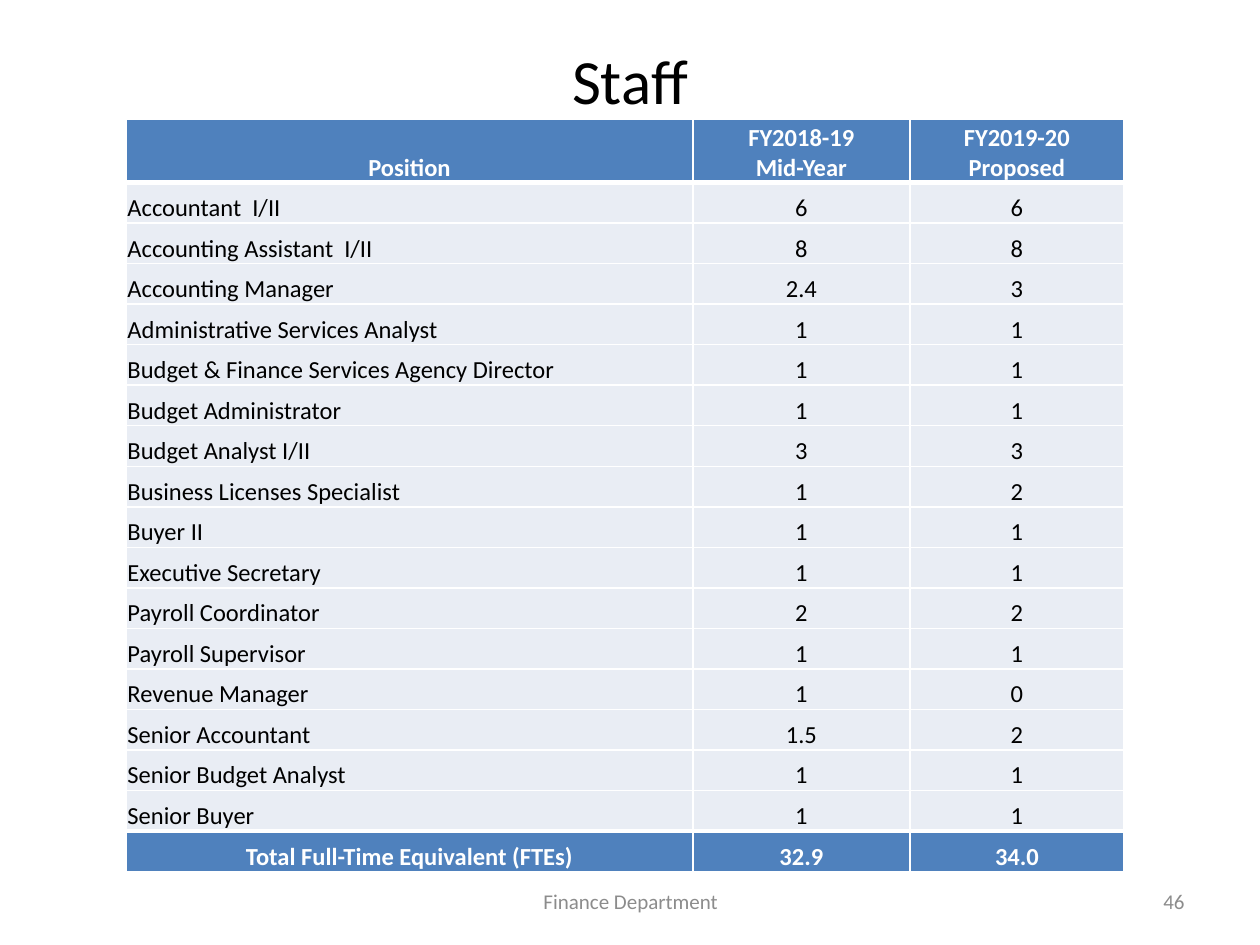
"""Build the Finance Department staff slide."""
from lxml.etree import SubElement
from pptx import Presentation
from pptx.dml.color import RGBColor
from pptx.enum.text import MSO_ANCHOR, PP_ALIGN
from pptx.oxml.ns import qn
from pptx.util import Cm, Pt

HEADINGS = ("Position", "FY2018-19\vMid-Year", "FY2019-20\vProposed")
POSITIONS = [
    ("Accountant  I/II", "6", "6"),
    ("Accounting Assistant  I/II", "8", "8"),
    ("Accounting Manager", "2.4", "3"),
    ("Administrative Services Analyst", "1", "1"),
    ("Budget & Finance Services Agency Director", "1", "1"),
    ("Budget Administrator", "1", "1"),
    ("Budget Analyst I/II", "3", "3"),
    ("Business Licenses Specialist", "1", "2"),
    ("Buyer II", "1", "1"),
    ("Executive Secretary", "1", "1"),
    ("Payroll Coordinator", "2", "2"),
    ("Payroll Supervisor", "1", "1"),
    ("Revenue Manager", "1", "0"),
    ("Senior Accountant", "1.5", "2"),
    ("Senior Budget Analyst", "1", "1"),
    ("Senior Buyer", "1", "1"),
]
TOTAL = ("Total Full-Time Equivalent (FTEs)", "32.9", "34.0")
CAPTIONS = [
    ("Staff", (1.27, 0.64, 22.86, 1.9), 36, "000000", PP_ALIGN.CENTER),
    ("Finance Department", (8.69, 17.65, 8.05, 1.02), 12, "8C8C8C", PP_ALIGN.CENTER),
    ("46", (18.21, 17.65, 5.92, 1.02), 12, "8C8C8C", PP_ALIGN.RIGHT),
]
COLUMN_WIDTHS = (11.43, 4.37, 4.32)
TABLE_LEFT, TABLE_TOP, TABLE_HEIGHT, HEADING_HEIGHT = 2.54, 2.41, 15.16, 1.27


def color(value):
    return RGBColor.from_string(value)


def style(paragraph, size, ink, align, bold=False):
    paragraph.alignment = align
    font = paragraph.font
    font.name, font.size, font.bold = "Calibri", Pt(size), bold
    font.color.rgb = color(ink)


def add_border(cell, side, points):
    line = SubElement(cell._tc.get_or_add_tcPr(), qn(f"a:ln{side}"), w=str(Pt(points)))
    fill = SubElement(line, qn("a:solidFill"))
    SubElement(fill, qn("a:srgbClr"), val="FFFFFF")


def add_caption(slide, wording, place, size, ink, align):
    caption = slide.shapes.add_textbox(*map(Cm, place)).text_frame
    caption.word_wrap = True
    caption.vertical_anchor = MSO_ANCHOR.MIDDLE
    caption.text = wording
    style(caption.paragraphs[0], size, ink, align)


def fill_cell(cell, wording, centered, strong, top, bottom):
    cell.margin_left = cell.margin_right = cell.margin_top = Cm(0.03)
    cell.margin_bottom = 0
    cell.vertical_anchor = MSO_ANCHOR.BOTTOM
    for side, points in (("L", 1), ("R", 1), ("T", top), ("B", bottom)):
        add_border(cell, side, points)
    cell.fill.solid()
    cell.fill.fore_color.rgb = color("4F81BD" if strong else "E9EDF4")
    cell.text = wording
    style(cell.text_frame.paragraphs[0], 14, "FFFFFF" if strong else "000000",
          PP_ALIGN.CENTER if centered else PP_ALIGN.LEFT, strong)


def add_staff_table(slide):
    rows = [HEADINGS, *POSITIONS, TOTAL]
    last = len(rows) - 1
    staff = slide.shapes.add_table(
        len(rows), len(HEADINGS), Cm(TABLE_LEFT), Cm(TABLE_TOP),
        Cm(sum(COLUMN_WIDTHS)), Cm(TABLE_HEIGHT)).table
    staff.first_row = staff.horz_banding = False
    for column, width in zip(staff.columns, COLUMN_WIDTHS):
        column.width = Cm(width)
    row_height = (TABLE_HEIGHT - HEADING_HEIGHT) / last
    for r, row in enumerate(rows):
        staff.rows[r].height = Cm(row_height if r else HEADING_HEIGHT)
        strong = r in (0, last)
        top = 3 if r in (1, last) else 1
        bottom = 3 if r in (0, last - 1) else 1
        for c, wording in enumerate(row):
            fill_cell(staff.cell(r, c), wording, strong or c > 0, strong, top, bottom)


def main():
    deck = Presentation()
    deck.slide_width, deck.slide_height = Cm(25.4), Cm(19.05)
    slide = deck.slides.add_slide(deck.slide_layouts[6])
    add_staff_table(slide)
    for caption in CAPTIONS:
        add_caption(slide, *caption)
    deck.save("out.pptx")


if __name__ == "__main__":
    main()
